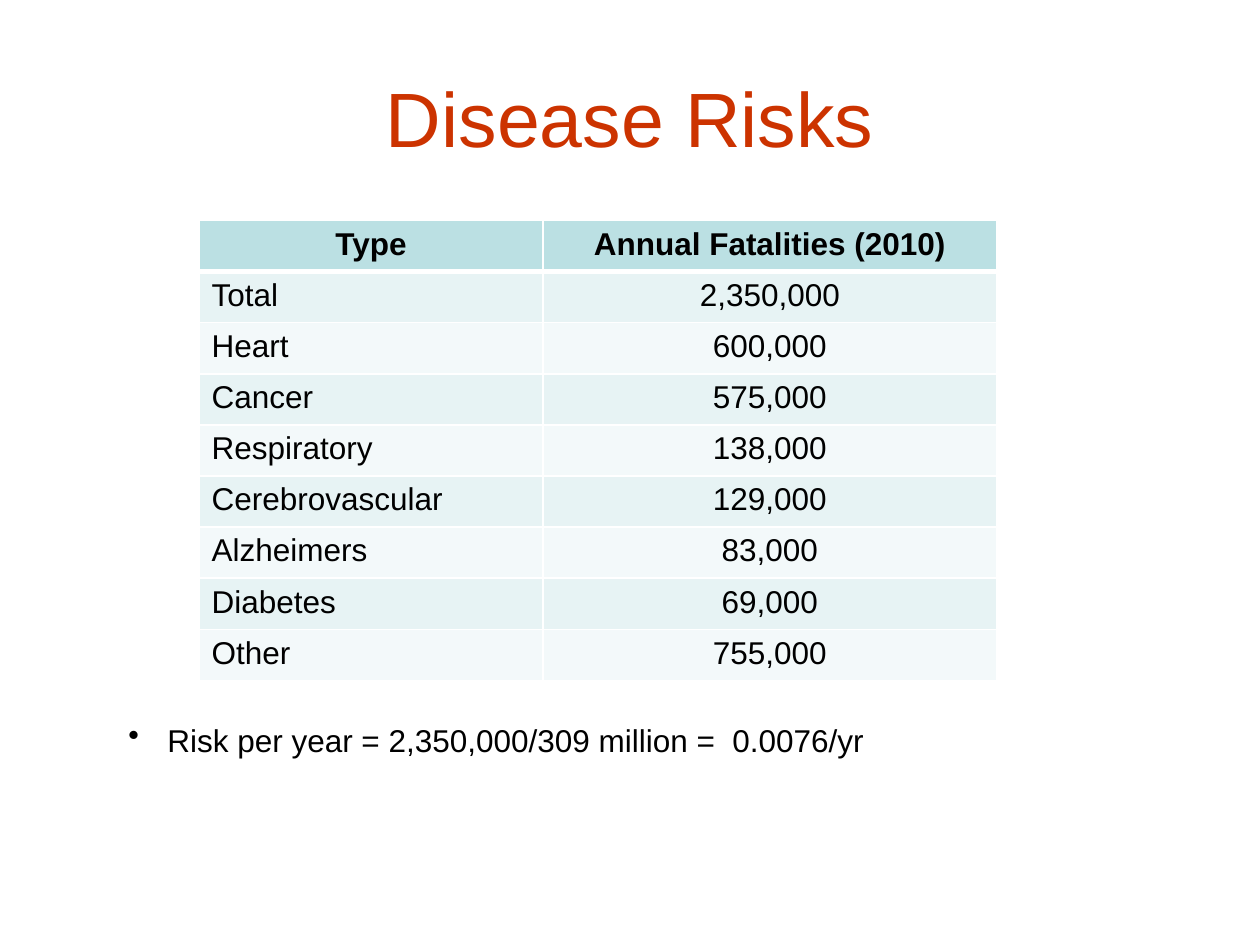
import dataclasses

import pptx
import pptx.dml.color
import pptx.enum.text
import pptx.oxml
import pptx.oxml.ns
import pptx.util

Inches = pptx.util.Inches
Pt = pptx.util.Pt
Align = pptx.enum.text.PP_ALIGN
Anchor = pptx.enum.text.MSO_ANCHOR


@dataclasses.dataclass(frozen=True)
class Theme:
    """Colours, font and type sizes of the slide."""
    font: str = "Arial"
    title: str = "CC3300"
    text: str = "000000"
    rule: str = "FFFFFF"
    head: str = "BBE0E3"
    bands: tuple = ("E7F3F4", "F3F9FA")
    large: int = 44
    body: int = 18


THEME = Theme()
RISKS = [
    ("Type", "Annual Fatalities (2010)"),
    ("Total", "2,350,000"),
    ("Heart", "600,000"),
    ("Cancer", "575,000"),
    ("Respiratory", "138,000"),
    ("Cerebrovascular", "129,000"),
    ("Alzheimers", "83,000"),
    ("Diabetes", "69,000"),
    ("Other", "755,000"),
]


def color(value):
    """Turn a hex string into a colour."""
    return pptx.dml.color.RGBColor.from_string(value)


def write(para, text, size=THEME.body, tint=THEME.text, bold=False, align=Align.LEFT):
    """Add one styled run to a paragraph."""
    para.alignment = align
    run = para.add_run()
    run.text = text
    run.font.name = THEME.font
    run.font.size = Pt(size)
    run.font.bold = bold
    run.font.color.rgb = color(tint)


def add_text(slide, box):
    """Add a wrapping text box and return its frame."""
    frame = slide.shapes.add_textbox(*map(Inches, box)).text_frame
    frame.word_wrap = True
    return frame


def add_title(slide, box):
    """Place the centred slide title."""
    frame = add_text(slide, box)
    frame.vertical_anchor = Anchor.MIDDLE
    write(frame.paragraphs[0], "Disease Risks", THEME.large, THEME.title, align=Align.CENTER)


def add_rules(cell, top, base):
    """Draw the borders of a cell, with widths in points."""
    props = cell._tc.get_or_add_tcPr()
    for index, (side, width) in enumerate(zip(("L", "R", "T", "B"), (1, 1, top, base))):
        line = pptx.oxml.parse_xml(
            f'<a:ln{side} {pptx.oxml.ns.nsdecls("a")} w="{Pt(width)}">'
            f'<a:solidFill><a:srgbClr val="{THEME.rule}"/></a:solidFill></a:ln{side}>'
        )
        props.insert(index, line)


def add_risks(slide, box, widths):
    """Place the table of fatalities by disease."""
    count = len(RISKS)
    table = slide.shapes.add_table(count, len(widths), *map(Inches, box)).table
    for column, width in zip(table.columns, widths):
        column.width = Inches(width)
    for r, record in enumerate(RISKS):
        table.rows[r].height = Inches(box[3] / count)
        head = r == 0
        for c, text in enumerate(record):
            cell = table.cell(r, c)
            cell.fill.solid()
            cell.fill.fore_color.rgb = color(THEME.head if head else THEME.bands[(r - 1) % 2])
            add_rules(cell, 3 if r == 1 else 1, 3 if head else 1)
            align = Align.CENTER if head or c else Align.LEFT
            write(cell.text_frame.paragraphs[0], text, bold=head, align=align)


def add_note(slide, box, indent):
    """Place the bulleted risk estimate."""
    frame = add_text(slide, box)
    frame.auto_size = pptx.enum.text.MSO_AUTO_SIZE.SHAPE_TO_FIT_TEXT
    para = frame.paragraphs[0]
    props = para._p.get_or_add_pPr()
    props.set("marL", str(Inches(indent)))
    props.set("indent", str(-Inches(indent)))
    props.append(pptx.oxml.parse_xml(f'<a:buChar {pptx.oxml.ns.nsdecls("a")} char="•"/>'))
    write(para, "Risk per year = 2,350,000/309 million =  0.0076/yr")


def main():
    """Build and save the slide."""
    deck = pptx.Presentation()
    deck.slide_width, deck.slide_height = Inches(10), Inches(7.5)
    slide = deck.slides.add_slide(deck.slide_layouts[6])
    add_title(slide, (0.5, 0.3, 9, 1.25))
    add_risks(slide, (1.58, 1.75, 6.33, 3.65), (2.73, 3.6))
    add_note(slide, (0.92, 5.67, 6.92, 0.4), 0.31)
    deck.save("out.pptx")


if __name__ == "__main__":
    main()
